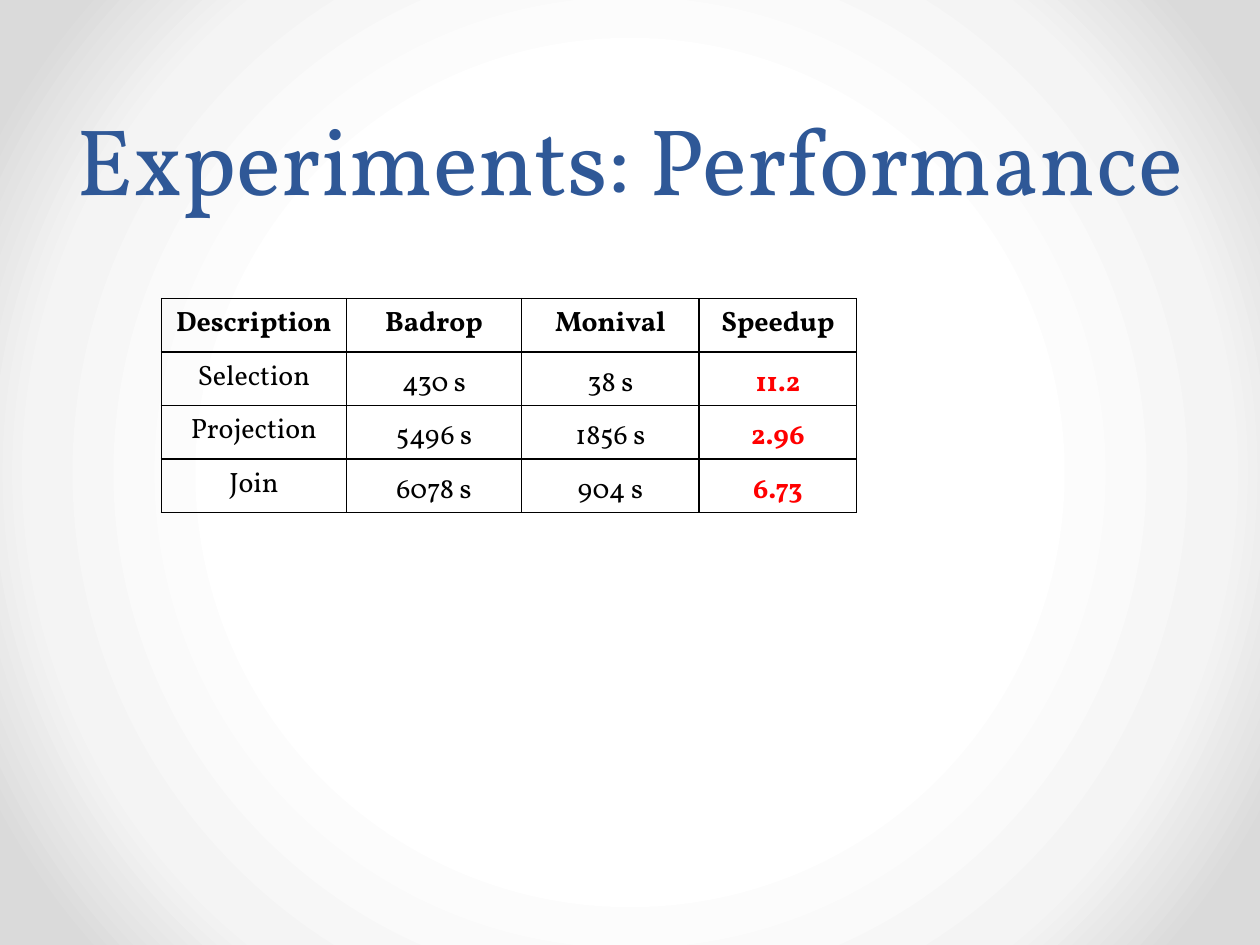
from dataclasses import dataclass

from lxml.etree import SubElement
from pptx import Presentation
from pptx.dml.color import RGBColor
from pptx.enum.text import MSO_ANCHOR, PP_ALIGN
from pptx.oxml.ns import qn
from pptx.util import Inches, Pt


@dataclass(frozen=True)
class Theme:
    font: str = "Vollkorn"
    title_size: int = 54
    title_leading: int = 58
    table_size: int = 16
    border_width: int = 1
    title: str = "2F5897"
    ink: str = "000000"
    highlight: str = "FF0000"
    backdrop: tuple = ((50, "FFFFFF"), (76, "F4F4F4"), (92, "DADADA"))


THEME = Theme()
HEADINGS = ("Description", "Badrop", "Monival", "Speedup")
RESULTS = (
    ("Selection", "430 s", "38 s", "11.2"),
    ("Projection", "5496 s", "1856 s", "2.96"),
    ("Join", "6078 s", "904 s", "6.73"),
)
COLUMN_WIDTHS = (1.47, 1.39, 1.41, 1.25)
TIME_MARGINS = (0.04, 0.08, 0.04, 0.04)
SPEEDUP_MARGINS = (0.1, 0.09, 0.1, 0.05)


def apply_format(target, values):
    for attribute, value in values.items():
        setattr(target, attribute, value)


def write_text(frame, text, size, color, bold=False, leading=None):
    paragraph = frame.paragraphs[0]
    apply_format(paragraph, {"alignment": PP_ALIGN.CENTER, "line_spacing": leading})
    run = paragraph.add_run()
    run.text = text
    apply_format(run.font, {"name": THEME.font, "size": Pt(size), "bold": bold})
    run.font.color.rgb = RGBColor.from_string(color)


def paint_background(slide):
    fill = slide.background.fill
    fill.gradient()
    gradient = slide.background._cSld.find(".//" + qn("a:gradFill"))
    for child in list(gradient):
        gradient.remove(child)
    stops = SubElement(gradient, qn("a:gsLst"))
    for position, color in THEME.backdrop:
        stop = SubElement(stops, qn("a:gs"), pos=str(position * 1000))
        SubElement(stop, qn("a:srgbClr"), val=color)
    circle = SubElement(gradient, qn("a:path"), path="circle")
    SubElement(circle, qn("a:fillToRect"), dict.fromkeys("ltrb", "50000"))


def add_title(slide, left, top, width, height):
    frame = slide.shapes.add_textbox(left, top, width, height).text_frame
    apply_format(frame, {"word_wrap": True, "vertical_anchor": MSO_ANCHOR.BOTTOM})
    write_text(frame, "Experiments: Performance", THEME.title_size, THEME.title,
               leading=Pt(THEME.title_leading))


def outline_cell(cell):
    properties = cell._tc.get_or_add_tcPr()
    for position, side in enumerate(("a:lnL", "a:lnR", "a:lnT", "a:lnB")):
        line = properties.makeelement(qn(side), {"w": str(Pt(THEME.border_width))})
        properties.insert(position, line)
        SubElement(SubElement(line, qn("a:solidFill")), qn("a:srgbClr"), val=THEME.ink)


def fill_cell(cell, text, row, column):
    is_heading = row == 0
    is_measure = not is_heading and column > 0
    is_speedup = is_measure and column == len(HEADINGS) - 1
    if is_measure:
        margins = SPEEDUP_MARGINS if is_speedup else TIME_MARGINS
        sides = ("margin_left", "margin_top", "margin_right", "margin_bottom")
        apply_format(cell, dict(zip(sides, map(Inches, margins))))
        cell.vertical_anchor = MSO_ANCHOR.MIDDLE
    cell.fill.background()
    outline_cell(cell)
    write_text(cell.text_frame, text, THEME.table_size,
               THEME.highlight if is_speedup else THEME.ink,
               bold=is_heading or is_speedup,
               leading=0.83 if is_measure else None)


def add_results(slide, left, top, width, height):
    rows = (HEADINGS, *RESULTS)
    table = slide.shapes.add_table(len(rows), len(HEADINGS), left, top, width, height).table
    apply_format(table, {"first_row": False, "horz_banding": False})
    for column, share in zip(table.columns, COLUMN_WIDTHS):
        column.width = int(width * share / sum(COLUMN_WIDTHS))
    for row, texts in enumerate(rows):
        for column, text in enumerate(texts):
            fill_cell(table.cell(row, column), text, row, column)


def main():
    deck = Presentation()
    apply_format(deck, {"slide_width": Inches(10), "slide_height": Inches(7.5)})
    slide = deck.slides.add_slide(deck.slide_layouts[6])
    paint_background(slide)
    add_title(slide, Inches(0.5), Inches(0), Inches(9), Inches(1.75))
    add_results(slide, Inches(1.28), Inches(2.37), Inches(5.52), Inches(1.7))
    deck.save("out.pptx")


if __name__ == "__main__":
    main()
